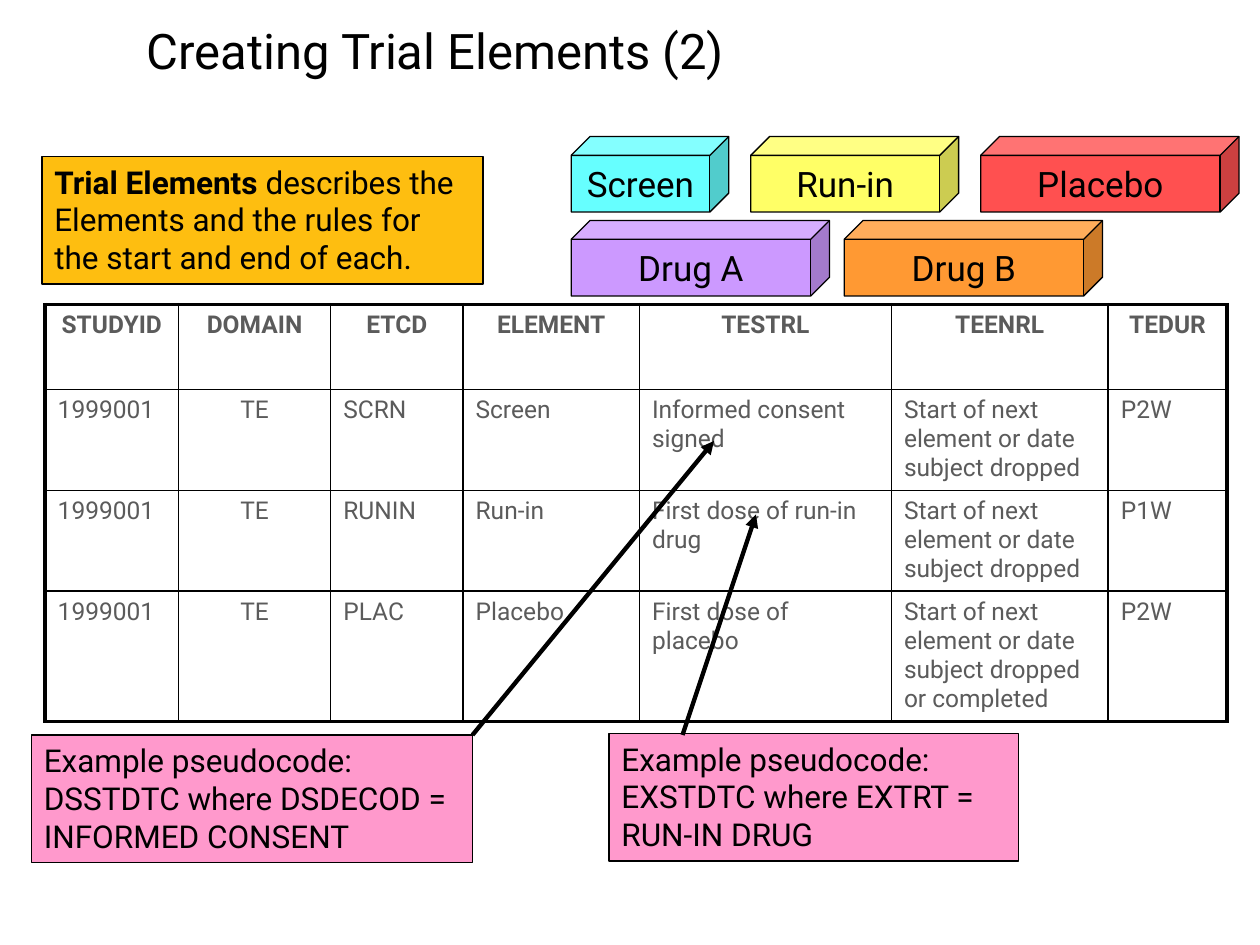
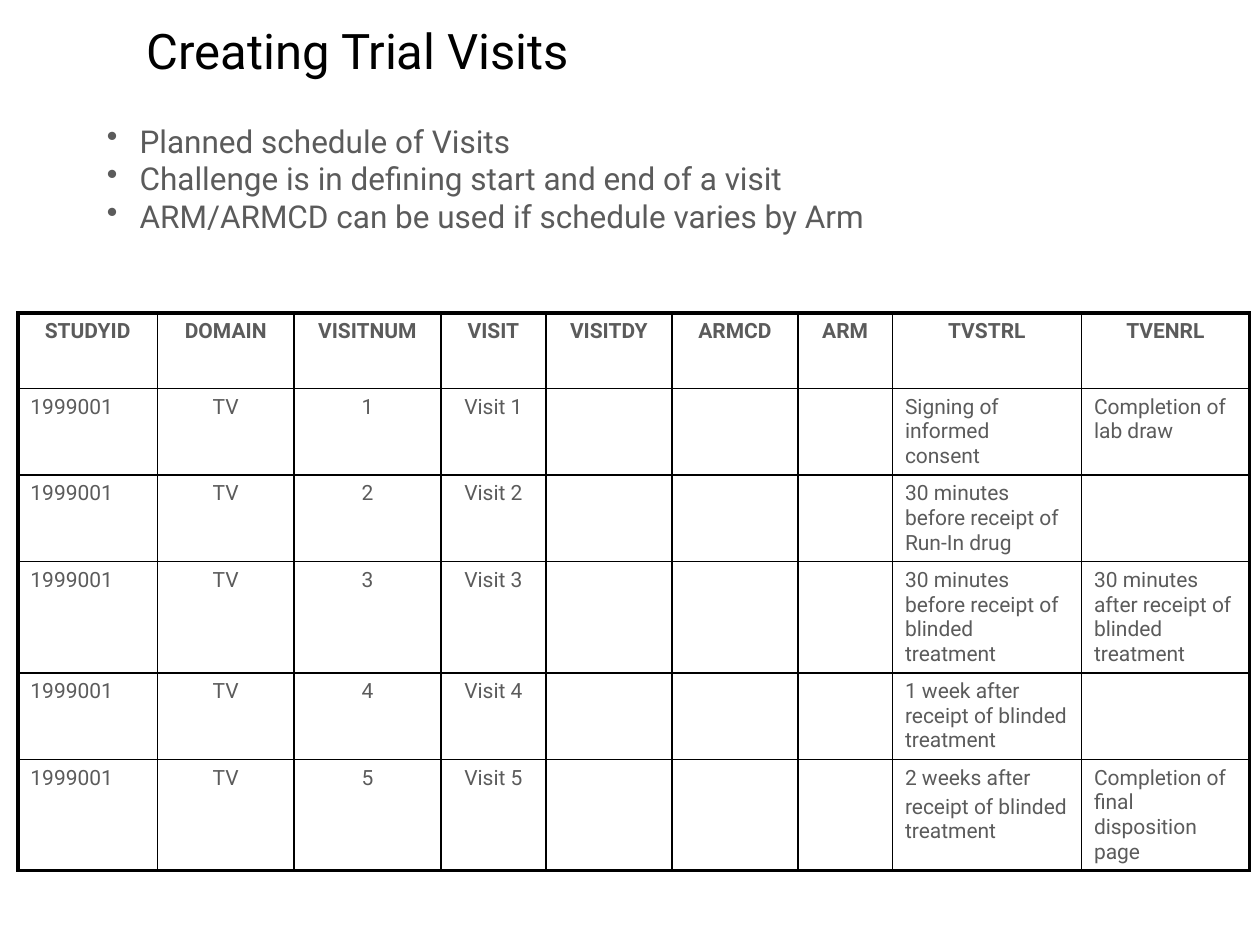
from lxml.etree import SubElement
from pptx import Presentation
from pptx.dml.color import RGBColor
from pptx.enum.shapes import MSO_CONNECTOR, MSO_SHAPE
from pptx.enum.text import MSO_ANCHOR, PP_ALIGN
from pptx.oxml import parse_xml
from pptx.oxml.ns import nsdecls, qn
from pptx.util import Inches, Pt

COLUMNS, ROWS = 120, 90
SLIDE_WIDTH, SLIDE_HEIGHT = Inches(10), Inches(7.5)
FONT = "Roboto"
COLORS = {
    "black": "000000", "grey": "5B5B5B", "gold": "FEBE10", "pink": "FF99CC",
    "aqua": "66FFFF", "yellow": "FFFF66", "red": "FF5050",
    "violet": "CC99FF", "orange": "FF9933",
}
THIN, THICK = 1, 2.25

CUBE_ROWS = [
    (13, 2.1, [("Screen", "aqua", 15), ("Run-in", "yellow", 19.8),
               ("Placebo", "red", 24.6)]),
    (21, 1.4, [("Drug A", "violet", 24.6), ("Drug B", "orange", 24.6)]),
]
NEXT_ELEMENT = "Start of next element or date subject dropped"
ELEMENTS = [
    ["STUDYID", "DOMAIN", "ETCD", "ELEMENT", "TESTRL", "TEENRL", "TEDUR"],
    ["1999001", "TE", "SCRN", "Screen", "Informed consent signed",
     NEXT_ELEMENT, "P2W"],
    ["1999001", "TE", "RUNIN", "Run-in", "First dose of run-in drug",
     NEXT_ELEMENT, "P1W"],
    ["1999001", "TE", "PLAC", "Placebo", "First dose of placebo",
     NEXT_ELEMENT + " or completed", "P2W"],
]
VISIT_HEADER = ["STUDYID", "DOMAIN", "VISITNUM", "VISIT", "VISITDY", "ARMCD",
                "ARM", "TVSTRL", "TVENRL"]
VISIT_RULES = [
    ("Signing of informed consent", "Completion of lab draw"),
    ("30 minutes before receipt of Run-In drug", ""),
    ("30 minutes before receipt of blinded treatment",
     "30 minutes after receipt of blinded treatment"),
    ("1 week after receipt of blinded treatment", ""),
    ("2 weeks after\nreceipt of blinded treatment",
     "Completion of final disposition page"),
]
VISIT_POINTS = [
    "Planned schedule of Visits",
    "Challenge is in defining start and end of a visit",
    "ARM/ARMCD can be used if schedule varies by Arm",
]


def across(columns):
    """Turn grid columns into a length."""
    return round(SLIDE_WIDTH * columns / COLUMNS)


def down(rows):
    """Turn grid rows into a length."""
    return round(SLIDE_HEIGHT * rows / ROWS)


def place(left, top, width, height):
    """Turn a grid area into the four lengths of a frame."""
    return across(left), down(top), across(width), down(height)


def color(name):
    """Look up a named colour."""
    return RGBColor.from_string(COLORS[name])


def add_span(para, text, size, ink="black", bold=False):
    """Add one styled run to a paragraph."""
    span = para.add_run()
    span.text = text
    span.font.name = FONT
    span.font.size = Pt(size)
    span.font.bold = bold
    span.font.color.rgb = color(ink)


def add_title(page, text):
    """Add the slide title."""
    frame = page.shapes.add_textbox(*place(14, 2, 102, 8)).text_frame
    frame.word_wrap = True
    frame.margin_left = frame.margin_right = 0
    frame.margin_top = frame.margin_bottom = 0
    add_span(frame.paragraphs[0], text, 28)


def add_block(shapes, kind, area, fill):
    """Add a filled, thinly outlined shape without shadow."""
    block = shapes.add_shape(kind, *place(*area))
    block.shadow.inherit = False
    block.fill.solid()
    block.fill.fore_color.rgb = color(fill)
    block.line.color.rgb = color("black")
    block.line.width = Pt(0.75)
    return block


def add_cube(page, text, fill, left, top, width):
    """Add a cube with a centred label."""
    cube = add_block(page.shapes, MSO_SHAPE.CUBE, (left, top, width, 7.2), fill)
    cube.adjustments[0] = 0.25
    frame = cube.text_frame
    frame.word_wrap = False
    frame.vertical_anchor = MSO_ANCHOR.MIDDLE
    frame.paragraphs[0].alignment = PP_ALIGN.CENTER
    add_span(frame.paragraphs[0], text, 20)


def add_note(shapes, area, fill, spans):
    """Add a coloured note made of (text, bold) spans."""
    frame = add_block(shapes, MSO_SHAPE.RECTANGLE, area, fill).text_frame
    frame.word_wrap = True
    frame.vertical_anchor = MSO_ANCHOR.TOP
    para = frame.paragraphs[0]
    para.alignment = PP_ALIGN.LEFT
    for text, bold in spans:
        add_span(para, text, 18, bold=bold)


def add_callout(page, area, text, start, end):
    """Add a pseudocode note grouped with its arrow."""
    shapes = page.shapes.add_group_shape().shapes
    add_note(shapes, area, "pink", [(text, False)])
    arrow = shapes.add_connector(
        MSO_CONNECTOR.STRAIGHT, across(start[0]), down(start[1]),
        across(end[0]), down(end[1]))
    arrow.line.color.rgb = color("black")
    arrow.line.width = Pt(2.5)
    SubElement(arrow.line._get_or_add_ln(), qn("a:tailEnd"), type="triangle")
    SubElement(arrow._element.spPr, qn("a:effectLst"))


def set_borders(cell, widths):
    """Draw the left, right, top and bottom borders of a cell."""
    properties = cell._tc.get_or_add_tcPr()
    for index, (side, width) in enumerate(zip("LRTB", widths)):
        properties.insert(index, parse_xml(
            f'<a:ln{side} {nsdecls("a")} w="{Pt(width)}"><a:solidFill>'
            f'<a:srgbClr val="{COLORS["black"]}"/></a:solidFill></a:ln{side}>'))


def fill_cell(cell, text, size, bold, centred):
    """Write the lines of a cell as paragraphs."""
    cell.fill.background()
    frame = cell.text_frame
    for index, line in enumerate(text.split("\n")):
        para = frame.add_paragraph() if index else frame.paragraphs[0]
        para.alignment = PP_ALIGN.CENTER if centred else PP_ALIGN.LEFT
        if index:
            para.space_before = Pt(size * 0.2)
        if line:
            add_span(para, line, size, "grey", bold)
        else:
            para.font.size = Pt(size)


def add_grid(page, left, top, widths, heights, records, size, centred):
    """Add a ruled table with a heavy frame and a bold header."""
    last_row, last_column = len(heights) - 1, len(widths) - 1
    area = place(left, top, sum(widths), sum(heights))
    table = page.shapes.add_table(len(heights), len(widths), *area).table
    table.first_row = table.horz_banding = False
    for column, width in zip(table.columns, widths):
        column.width = across(width)
    for row, height in zip(table.rows, heights):
        row.height = down(height)
    for r, record in enumerate(records):
        for c, text in enumerate(record):
            cell = table.cell(r, c)
            fill_cell(cell, text, size, r == 0, r == 0 or c in centred)
            edges = (c == 0, c == last_column, r == 0, r == last_row)
            set_borders(cell, [THICK if edge else THIN for edge in edges])


def add_bullets(page, area, points):
    """Add a bulleted list."""
    frame = page.shapes.add_textbox(*place(*area)).text_frame
    frame.word_wrap = True
    for index, point in enumerate(points):
        para = frame.add_paragraph() if index else frame.paragraphs[0]
        properties = para._p.get_or_add_pPr()
        properties.set("marL", str(Inches(0.26)))
        properties.set("indent", str(-Inches(0.26)))
        SubElement(properties, qn("a:buChar"), char="•")
        add_span(para, point, 18, "grey")


def build_elements(page):
    """Build the Trial Elements slide."""
    for top, gap, cubes in CUBE_ROWS:
        left = 54.4
        for text, fill, width in cubes:
            add_cube(page, text, fill, left, top, width)
            left += width + gap
    add_note(page.shapes, (4, 14.9, 42, 12.15), "gold", [
        ("Trial Elements ", True),
        ("describes the Elements and the rules for the start and end of each.",
         False)])
    add_grid(page, 4.3, 29, [12.7, 14.5, 12.6, 16.8, 24, 20.65, 11.3],
             [8.1, 9.6, 9.6, 12.4], ELEMENTS, 14, {1})
    add_title(page, "Creating Trial Elements (2)")
    add_callout(page, (3, 70, 42, 12.15),
                "Example pseudocode: DSSTDTC where DSDECOD = INFORMED CONSENT",
                (45, 70), (68, 42))
    add_callout(page, (58, 69.85, 39, 12.15),
                "Example pseudocode: EXSTDTC where EXTRT = RUN-IN DRUG",
                (65, 70), (72, 49))


def build_visits(page):
    """Build the Trial Visits slide."""
    visits = [["1999001", "TV", str(number), f"Visit {number}", "", "", "",
               start, end]
              for number, (start, end) in enumerate(VISIT_RULES, 1)]
    add_grid(page, 1.7, 29.8, [13.3, 13, 14, 10, 12, 12, 9, 18, 16],
             [7.2, 8.25, 8.25, 10.55, 8.25, 10.55], [VISIT_HEADER] + visits,
             12, {1, 2, 3})
    add_title(page, "Creating Trial Visits")
    add_bullets(page, (9, 11, 105, 15.6), VISIT_POINTS)


def main():
    """Build and save the deck."""
    deck = Presentation()
    deck.slide_width, deck.slide_height = SLIDE_WIDTH, SLIDE_HEIGHT
    for build in (build_elements, build_visits):
        build(deck.slides.add_slide(deck.slide_layouts[6]))
    deck.save("out.pptx")


if __name__ == "__main__":
    main()
